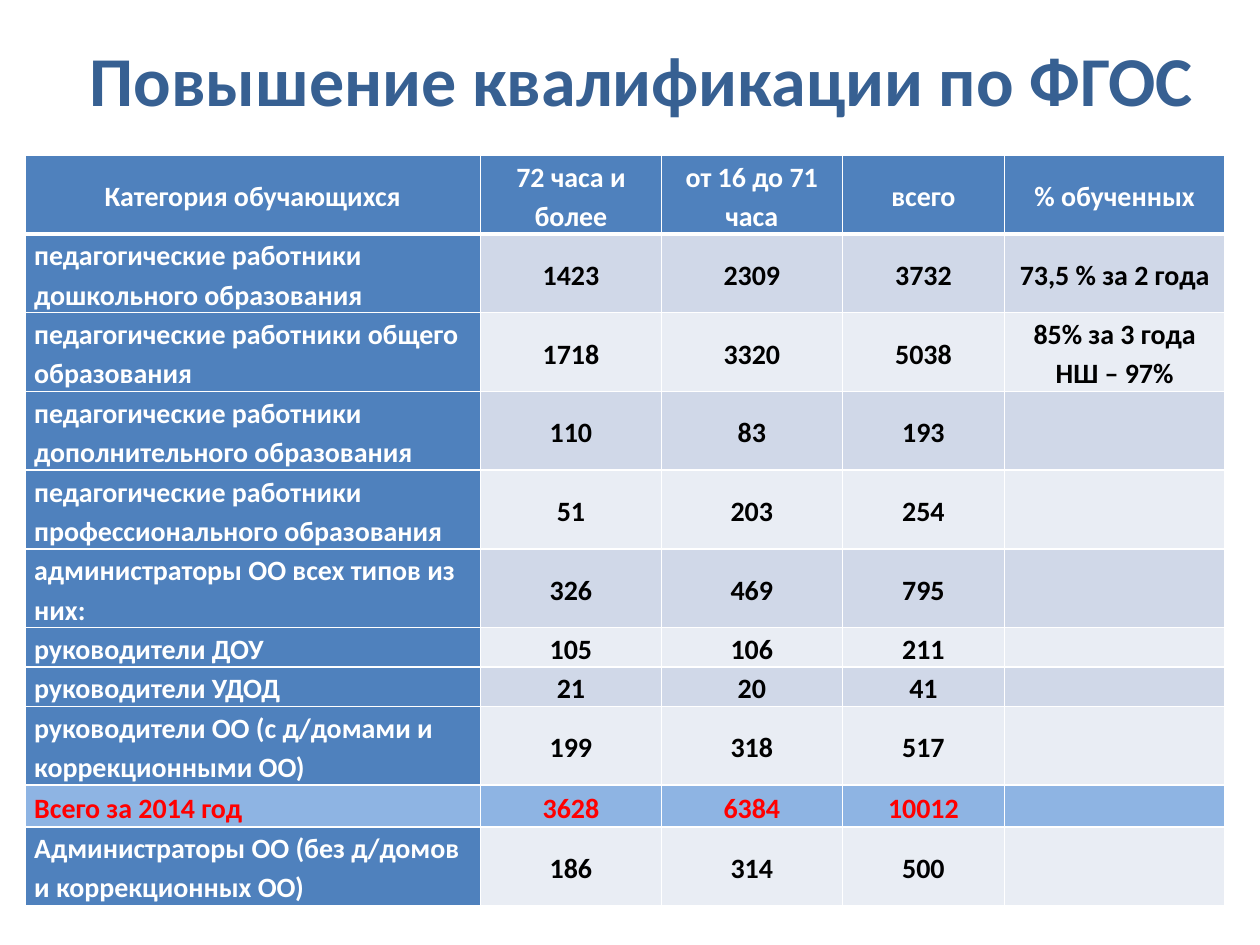
from typing import NamedTuple

from lxml import etree
from pptx import Presentation
from pptx.dml.color import RGBColor
from pptx.enum import text as txt
from pptx.oxml import ns
from pptx.util import Cm, Inches, Pt

HUES = {
    "title": "376092",
    "head": "4F81BD",
    "odd": "D0D8E8",
    "even": "E9EDF4",
    "sum": "8EB4E3",
    "white": "FFFFFF",
    "black": "000000",
    "red": "FF0000",
}
FONT = "Calibri"
WIDTHS = (9.19, 3.64, 3.65, 3.27, 4.44)
TALL, SHORT, TOTAL = 1.58, 0.79, 0.84
LEFT, MID = txt.PP_ALIGN.LEFT, txt.PP_ALIGN.CENTER


class Row(NamedTuple):
    label: str
    long: str
    brief: str
    total: str
    share: str = ""
    height: float = TALL
    kind: str = "data"


ROWS = [
    Row("Категория обучающихся", "72 часа и более", "от 16 до 71 часа",
        "всего", "% обученных", kind="head"),
    Row("педагогические работники дошкольного образования",
        "1423", "2309", "3732", "73,5 % за 2 года"),
    Row("педагогические работники общего образования",
        "1718", "3320", "5038", "85% за 3 года\nНШ – 97%"),
    Row("педагогические работники дополнительного образования",
        "110", "83", "193"),
    Row("педагогические работники профессионального образования",
        "51", "203", "254"),
    Row("администраторы ОО всех типов из них:", "326", "469", "795"),
    Row("руководители ДОУ", "105", "106", "211", height=SHORT),
    Row("руководители УДОД", "21", "20", "41", height=SHORT),
    Row("руководители ОО (с д/домами и коррекционными ОО)",
        "199", "318", "517"),
    Row("Всего за 2014 год", "3628", "6384", "10012",
        height=TOTAL, kind="sum"),
    Row("Администраторы ОО (без д/домов и коррекционных ОО)",
        "186", "314", "500"),
]


def write(frame, words: str, *, size: float, hue: str,
          align=MID, space: float = 1.0) -> None:
    """Fill a text frame with bold text, one paragraph per line of words."""
    frame.text = words
    for para in frame.paragraphs:
        para.alignment = align
        para.line_spacing = space
        for run in para.runs:
            font = run.font
            font.name, font.size, font.bold = FONT, Pt(size), True
            font.color.rgb = RGBColor.from_string(HUES[hue])
        if not para.runs:
            end = etree.SubElement(para._p, ns.qn("a:endParaRPr"))
            end.set("sz", str(int(size * 100)))


def edge(cell, base: float) -> None:
    """Draw white cell borders; base is the width of the bottom one."""
    props = cell._tc.get_or_add_tcPr()
    for side, width in (("L", 1), ("R", 1), ("T", 1), ("B", base)):
        line = etree.SubElement(props, ns.qn(f"a:ln{side}"), w=str(Pt(width)))
        fill = etree.SubElement(line, ns.qn("a:solidFill"))
        etree.SubElement(fill, ns.qn("a:srgbClr"), val=HUES["white"])


def tint(row: Row, r: int, c: int) -> tuple[str, str]:
    """Choose the fill and text colours of a cell."""
    if row.kind == "sum":
        return "sum", "red"
    if row.kind == "head" or c == 0:
        return "head", "white"
    return ("odd" if r % 2 else "even"), "black"


def draw_cell(cell, row: Row, r: int, c: int) -> None:
    fill, hue = tint(row, r, c)
    cell.margin_left = cell.margin_right = Cm(0.19)
    cell.margin_top = cell.margin_bottom = 0
    cell.vertical_anchor = txt.MSO_ANCHOR.MIDDLE
    edge(cell, 3 if row.kind == "head" else 1)
    cell.fill.solid()
    cell.fill.fore_color.rgb = RGBColor.from_string(HUES[fill])
    align = LEFT if c == 0 and row.kind != "head" else MID
    write(cell.text_frame, row[c], size=16, hue=hue, align=align, space=1.15)


def draw_table(slide, rows: list[Row]) -> None:
    high = sum(row.height for row in rows)
    grid = slide.shapes.add_table(
        len(rows), len(WIDTHS), Cm(0.5), Cm(3.13),
        Cm(sum(WIDTHS)), Cm(high)).table
    for col, width in zip(grid.columns, WIDTHS):
        col.width = Cm(width)
    for r, row in enumerate(rows):
        grid.rows[r].height = Cm(row.height)
        for c in range(len(WIDTHS)):
            draw_cell(grid.cell(r, c), row, r, c)


def draw_title(slide, words: str) -> None:
    title = slide.shapes.title
    title.left, title.top = Cm(1.5), Cm(0)
    title.width, title.height = Cm(22.86), Cm(3.18)
    frame = title.text_frame
    frame.auto_size = txt.MSO_AUTO_SIZE.NONE
    frame.vertical_anchor = txt.MSO_ANCHOR.MIDDLE
    write(frame, words, size=40, hue="title")


def main() -> None:
    deck = Presentation()
    deck.slide_width, deck.slide_height = Inches(10), Inches(7.5)
    slide = deck.slides.add_slide(deck.slide_layouts[5])
    draw_title(slide, "Повышение квалификации по ФГОС")
    draw_table(slide, ROWS)
    deck.save("out.pptx")


if __name__ == "__main__":
    main()
